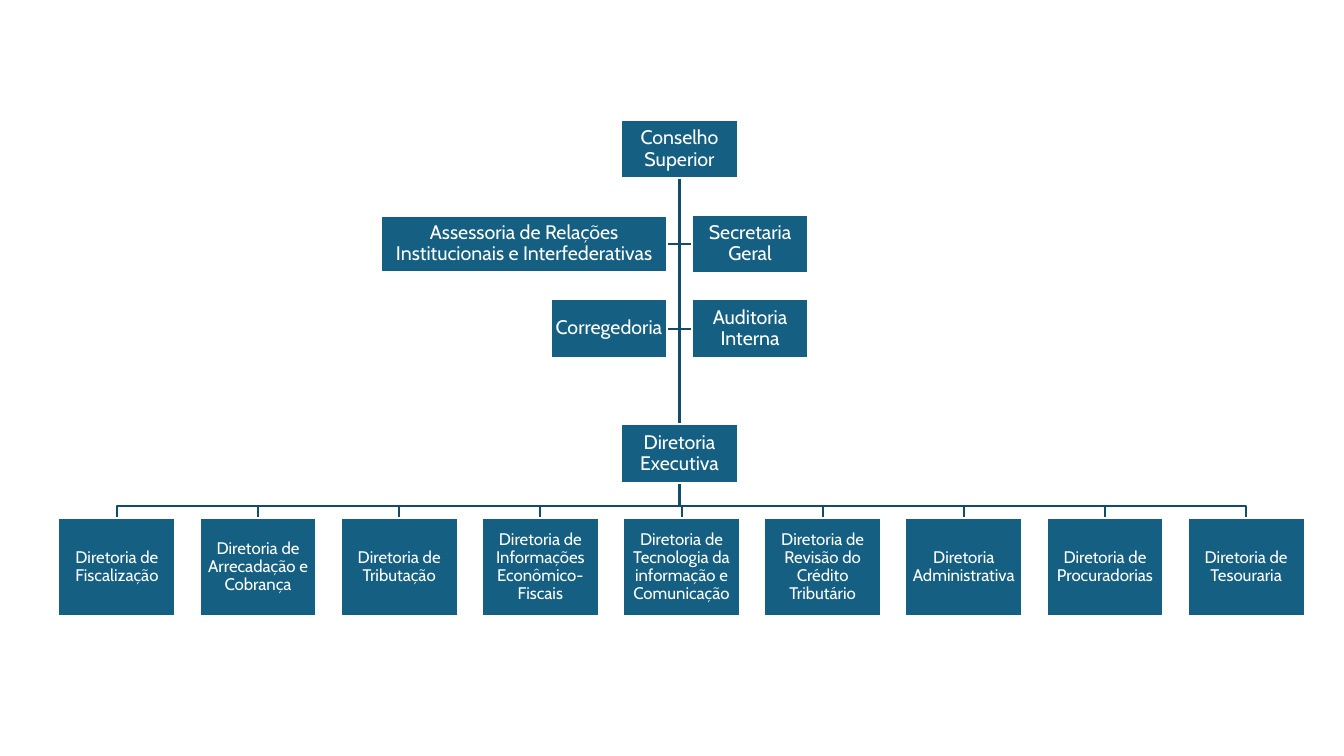
from dataclasses import dataclass

from pptx import Presentation
from pptx import util as u
from pptx.dml.color import RGBColor
from pptx.enum import shapes, text

TEAL = RGBColor(0x15, 0x60, 0x82)
NAVY = RGBColor(0x11, 0x4D, 0x68)
WHITE = RGBColor(0xFF, 0xFF, 0xFF)

# Grid in inches: a central trunk, named rows and nine equal columns
WIDE, HIGH = 13.33, 7.5
TRUNK, GAP = 6.74, 0.12
BOX_W, BOX_H, UNIT_H = 1.16, 0.58, 0.97
ROWS = {"council": 1.19, "staff": 2.13, "control": 2.97, "exec": 4.21, "units": 5.14}
COL, MID_COL = 1.4, 6.18
BUS = 5.02
START = ROWS["council"] + BOX_H


@dataclass
class Box:
    label: str
    left: float
    top: float
    width: float = BOX_W
    height: float = BOX_H
    size: int = 14

    @property
    def mid(self) -> float:
        return self.left + self.width / 2


def central(label: str, row: str) -> Box:
    return Box(label, TRUNK - BOX_W / 2, ROWS[row])


def beside(label: str, row: str, side: int, width: float = BOX_W,
           height: float = BOX_H) -> Box:
    """Place a box left (-1) or right (1) of the trunk, centred on its row."""
    left = TRUNK + GAP if side > 0 else TRUNK - GAP - width
    return Box(label, left, ROWS[row] + (BOX_H - height) / 2, width, height)


def unit(index: int, label: str) -> Box:
    left = MID_COL + (index - 4) * COL
    return Box(label, left, ROWS["units"], height=UNIT_H, size=12)


def style(target: object, values: dict) -> None:
    for name, value in values.items():
        setattr(target, name, value)


def draw_line(slide, points: list[tuple[float, float]]) -> None:
    """Draw an open elbow line through the points."""
    spots = [(u.Inches(x), u.Inches(y)) for x, y in points]
    path = slide.shapes.build_freeform(*spots[0])
    path.add_line_segments(spots[1:], close=False)
    line = path.convert_to_shape()
    line.shadow.inherit = False
    line.fill.background()
    line.line.color.rgb = NAVY
    line.line.width = u.Pt(1.5)


def draw_box(slide, box: Box) -> None:
    sides = (box.left, box.top, box.width, box.height)
    shape = slide.shapes.add_shape(shapes.MSO_SHAPE.RECTANGLE, *map(u.Inches, sides))
    shape.shadow.inherit = False
    shape.fill.solid()
    shape.fill.fore_color.rgb = TEAL
    shape.line.color.rgb = WHITE
    shape.line.width = u.Pt(1.5)
    frame = shape.text_frame
    inset = u.Inches(0.01)
    style(frame, {"word_wrap": True, "vertical_anchor": text.MSO_ANCHOR.MIDDLE,
                  "margin_left": inset, "margin_right": inset,
                  "margin_top": inset, "margin_bottom": inset})
    para = frame.paragraphs[0]
    style(para, {"text": box.label, "alignment": text.PP_ALIGN.CENTER,
                 "line_spacing": 0.9})
    style(para.font, {"name": "Cabin", "size": u.Pt(box.size)})
    para.font.color.rgb = WHITE


HEADS = [central("Conselho Superior", "council"),
         central("Diretoria Executiva", "exec")]
STAFF = [
    beside("Assessoria de Relações Institucionais e Interfederativas",
           "staff", -1, 2.84, 0.56),
    beside("Secretaria Geral", "staff", 1),
    beside("Corregedoria", "control", -1),
    beside("Auditoria Interna", "control", 1),
]
UNITS = [unit(i, label) for i, label in enumerate([
    "Diretoria de Fiscalização",
    "Diretoria de Arrecadação e Cobrança",
    "Diretoria de Tributação",
    "Diretoria de Informações Econômico-Fiscais",
    "Diretoria de Tecnologia da informação e Comunicação",
    "Diretoria de Revisão do Crédito Tributário",
    "Diretoria Administrativa",
    "Diretoria de Procuradorias",
    "Diretoria de Tesouraria",
])]


def main() -> None:
    deck = Presentation()
    style(deck, {"slide_width": u.Inches(WIDE), "slide_height": u.Inches(HIGH)})
    slide = deck.slides.add_slide(deck.slide_layouts[6])

    # Lines from the council, behind the boxes
    for box in STAFF:
        level = box.top + box.height / 2
        edge = TRUNK + GAP if box.left > TRUNK else TRUNK - GAP
        draw_line(slide, [(TRUNK, START), (TRUNK, level), (edge, level)])
    for box in UNITS:
        draw_line(slide, [(TRUNK, START), (TRUNK, BUS), (box.mid, BUS),
                          (box.mid, box.top)])

    # Boxes
    for box in HEADS + STAFF + UNITS:
        draw_box(slide, box)

    deck.save("out.pptx")


if __name__ == "__main__":
    main()
